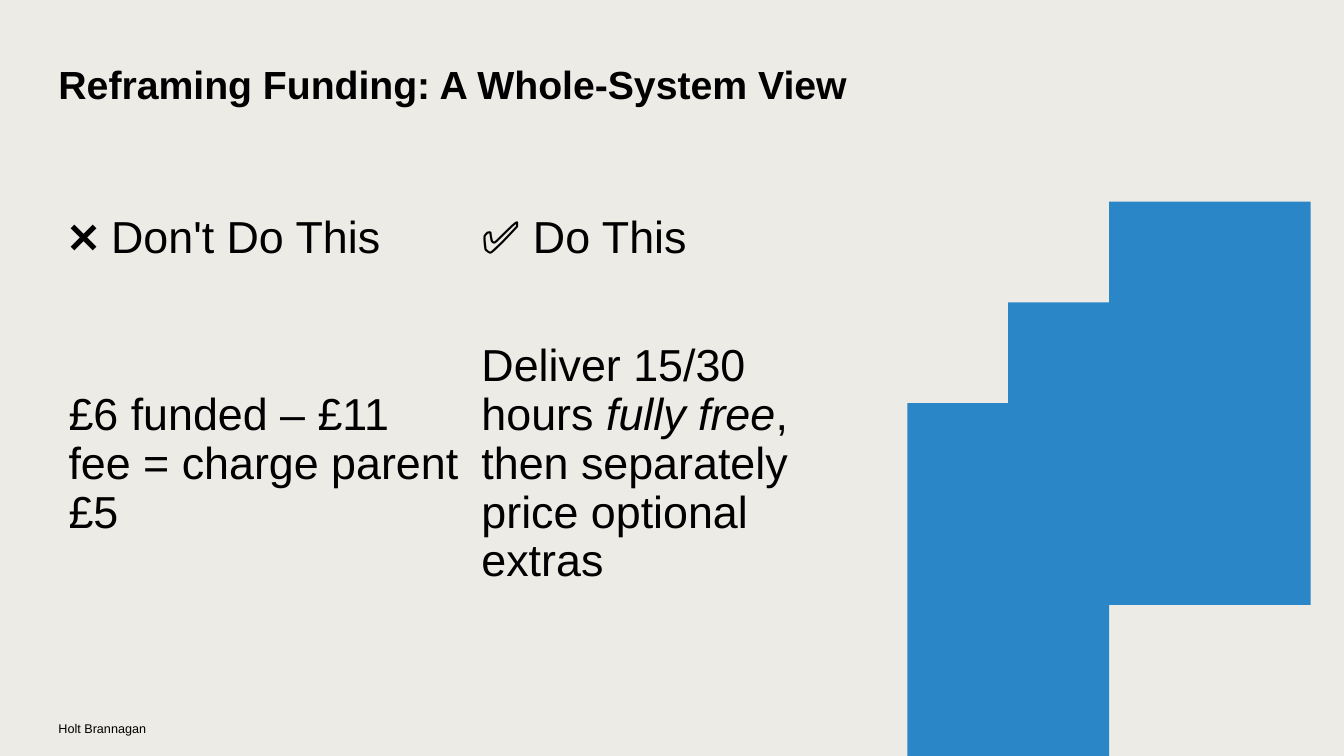
from pptx import Presentation
from pptx.dml.color import RGBColor
from pptx.enum.text import MSO_ANCHOR, PP_ALIGN
from pptx.util import Inches, Pt

BACKGROUND = RGBColor(0xED, 0xEB, 0xE6)
BLUE = RGBColor(0x2B, 0x86, 0xC7)
BLACK = RGBColor(0, 0, 0)
FONT = "Arial"
NO_STYLE_NO_GRID = "{2D5ABB26-0587-4C30-8999-92F81FD0307C}"

TITLE = "Reframing Funding: A Whole-System View"
FOOTER = "Holt Brannagan"
# Each cell is a list of (text, italic) spans.
ROWS = [
    [[("❌ Don't Do This", False)], [("✅ Do This", False)]],
    [[("£6 funded – £11 fee = charge parent £5", False)],
     [("Deliver 15/30 hours\u00a0", False), ("fully free", True),
      (", then separately price optional extras", False)]],
]
ROW_HEIGHTS = [1.4, 3.08]

LEFT = 0.58
TABLE_TOP, TABLE_WIDTH = 1.67, 8.19

# Ring outline: one point is a straight line, three points are a curve.
RING_START = (13.33, 1.67)
RING_SEGMENTS = [
    [(13.33, 5.33)],
    [(13.1, 5.37)],
    [(12.09, 5.57), (11.31, 6.37), (11.13, 7.39)],
    [(11.11, 7.5)],
    [(9.1, 7.5)],
    [(9.03, 7.21)],
    [(8.97, 6.92), (8.94, 6.63), (8.94, 6.32)],
    [(8.94, 3.91), (10.78, 1.93), (13.13, 1.69)],
]
CURVE_STEPS = 40


def curve_points(start, first, second, end):
    """Sample a cubic Bezier curve, leaving out its start."""
    for step in range(1, CURVE_STEPS + 1):
        t = step / CURVE_STEPS
        weights = ((1 - t) ** 3, 3 * t * (1 - t) ** 2, 3 * t ** 2 * (1 - t), t ** 3)
        yield tuple(sum(weight * point[axis] for weight, point
                        in zip(weights, (start, first, second, end)))
                    for axis in (0, 1))


def style_font(font, size, bold=False, italic=False):
    font.name = FONT
    font.size = Pt(size)
    font.bold = bold
    font.italic = italic
    font.color.rgb = BLACK


def fill_line(shape, text, size, bold=False, anchor=MSO_ANCHOR.TOP):
    """Set one line of text in a box without insets."""
    frame = shape.text_frame
    frame.margin_left = frame.margin_top = frame.margin_right = frame.margin_bottom = 0
    frame.word_wrap = True
    frame.vertical_anchor = anchor
    frame.text = text
    para = frame.paragraphs[0]
    para.alignment = PP_ALIGN.LEFT
    style_font(para.runs[0].font, size, bold)


def add_ring(page):
    points = []
    current = RING_START
    for segment in RING_SEGMENTS:
        points += segment if len(segment) == 1 else curve_points(current, *segment)
        current = segment[-1]
    builder = page.shapes.build_freeform(*RING_START, scale=Inches(1))
    builder.add_line_segments(points, close=True)
    ring = builder.convert_to_shape()
    ring.shadow.inherit = False
    ring.fill.solid()
    ring.fill.fore_color.rgb = BLUE
    ring.line.fill.background()


def add_comparison(page):
    frame = page.shapes.add_table(len(ROWS), len(ROWS[0]), Inches(LEFT), Inches(TABLE_TOP),
                                  Inches(TABLE_WIDTH), Inches(sum(ROW_HEIGHTS)))
    table = frame.table
    table.first_row = table.horz_banding = False
    table._tbl.tblPr[0].text = NO_STYLE_NO_GRID
    for row_index, (row, height) in enumerate(zip(ROWS, ROW_HEIGHTS)):
        table.rows[row_index].height = Inches(height)
        for column_index, spans in enumerate(row):
            cell = table.cell(row_index, column_index)
            cell.fill.background()
            cell.vertical_anchor = MSO_ANCHOR.MIDDLE
            para = cell.text_frame.paragraphs[0]
            para.line_spacing = 0.97
            for text, italic in spans:
                span = para.add_run()
                span.text = text
                style_font(span.font, 32, italic=italic)


def main():
    deck = Presentation()
    deck.slide_width, deck.slide_height = Inches(13.33), Inches(7.5)
    page = deck.slides.add_slide(deck.slide_layouts[5])
    page.background.fill.solid()
    page.background.fill.fore_color.rgb = BACKGROUND

    footer = page.shapes.add_textbox(Inches(LEFT), Inches(7.15), Inches(2.41), Inches(0.16))
    fill_line(footer, FOOTER, 9)

    title = page.shapes.title
    title.left, title.top = Inches(LEFT), Inches(0.58)
    title.width, title.height = Inches(12.18), Inches(0.5)
    fill_line(title, TITLE, 28, bold=True, anchor=MSO_ANCHOR.MIDDLE)

    add_ring(page)
    add_comparison(page)
    deck.save("out.pptx")


if __name__ == "__main__":
    main()
